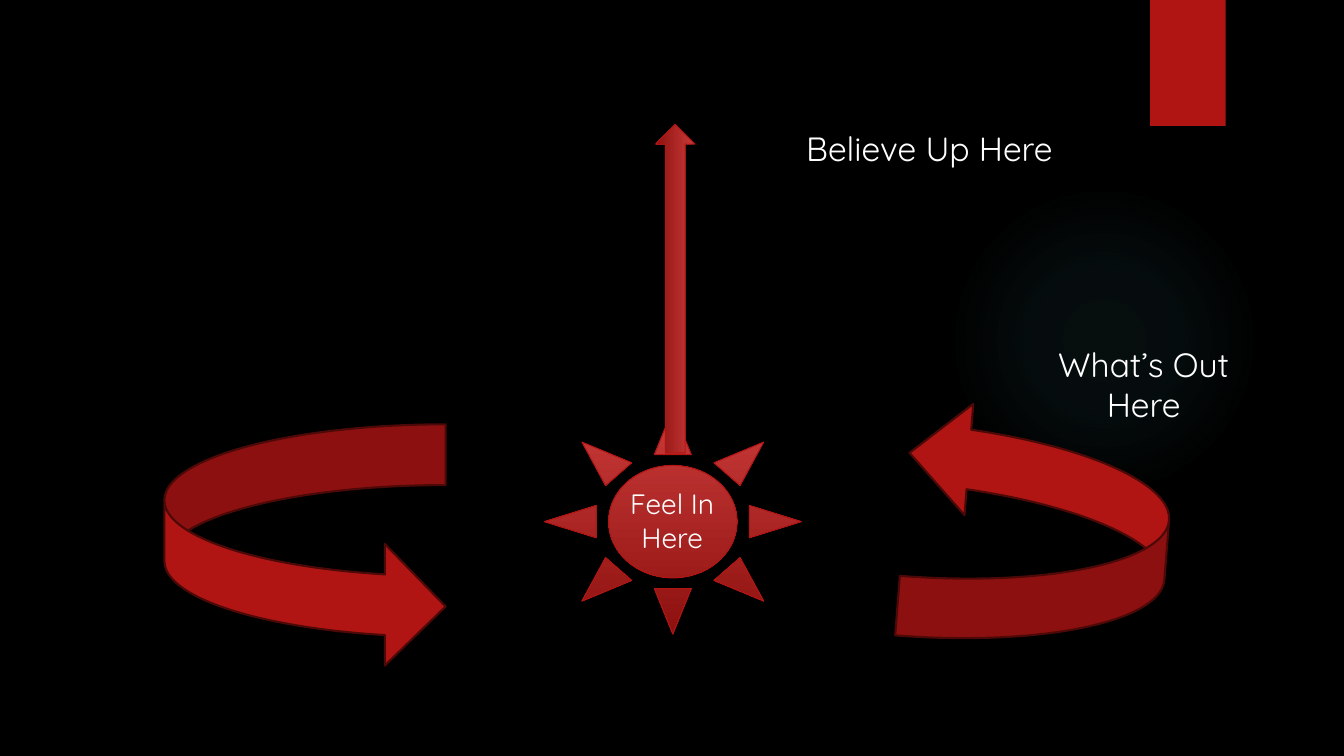
from lxml import etree
from pptx import Presentation
from pptx.dml.color import RGBColor
from pptx.enum.shapes import MSO_SHAPE
from pptx.enum.text import MSO_AUTO_SIZE, PP_ALIGN
from pptx.oxml.ns import qn
from pptx.util import Pt

OVAL, RECTANGLE, SUN = MSO_SHAPE.OVAL, MSO_SHAPE.RECTANGLE, MSO_SHAPE.SUN
LEFT_ARROW = MSO_SHAPE.LEFT_ARROW
CURVED_LEFT, CURVED_RIGHT = MSO_SHAPE.CURVED_LEFT_ARROW, MSO_SHAPE.CURVED_RIGHT_ARROW
LEFT, CENTER = PP_ALIGN.LEFT, PP_ALIGN.CENTER
GROW = MSO_AUTO_SIZE.SHAPE_TO_FIT_TEXT

FONT = "Quicksand"
COLORS = {
    "background": "000000",
    "text": "FFFFFF",
    "red": "B01513",
    "light": "C93B3A",
    "dark": "8D110F",
    "outline": "4D0908",
    "glow": "50B9C1",
}
GLOW_STOPS = [(0, 7), (36, 6), (69, 0)]


def color(name):
    return RGBColor.from_string(COLORS[name])


def add_figure(page, kind, place, line=None, width=0.75):
    shape = page.shapes.add_shape(kind, *map(Pt, place))
    shape.shadow.inherit = False
    if line:
        shape.line.color.rgb = color(line)
        shape.line.width = Pt(width)
    else:
        shape.line.fill.background()
    return shape


def add_solid(page, kind, place, line=None, width=0.75):
    shape = add_figure(page, kind, place, line, width)
    shape.fill.solid()
    shape.fill.fore_color.rgb = color("red")
    return shape


def add_shaded(page, kind, place):
    shape = add_figure(page, kind, place, "red")
    shape.fill.gradient()
    shape.fill.gradient_angle = 270
    for stop, name in zip(shape.fill.gradient_stops, ("light", "dark")):
        stop.color.rgb = color(name)
    return shape


def add_glow(page, place):
    shape = add_figure(page, OVAL, place)
    shape.fill.gradient()
    gradient = shape._element.spPr.find(qn("a:gradFill"))
    for child in list(gradient):
        gradient.remove(child)
    stops = etree.SubElement(gradient, qn("a:gsLst"))
    for position, opacity in GLOW_STOPS:
        stop = etree.SubElement(stops, qn("a:gs"), pos=str(position * 1000))
        tint = etree.SubElement(stop, qn("a:srgbClr"), val=COLORS["glow"])
        etree.SubElement(tint, qn("a:alpha"), val=str(opacity * 1000))
    circle = etree.SubElement(gradient, qn("a:path"), path="circle")
    center = dict.fromkeys("ltrb", "50000")
    etree.SubElement(circle, qn("a:fillToRect"), center)


def add_label(page, text, place, size, align):
    box = page.shapes.add_textbox(*map(Pt, place))
    frame = box.text_frame
    frame.word_wrap = True
    frame.auto_size = GROW
    frame.text = text
    para = frame.paragraphs[0]
    para.alignment = align
    for span in para.runs:
        span.font.name = FONT
        span.font.size = Pt(size)
        span.font.color.rgb = color("text")


def main():
    deck = Presentation()
    deck.slide_width, deck.slide_height = Pt(960), Pt(540)
    page = deck.slides.add_slide(deck.slide_layouts[6])
    page.background.fill.solid()
    page.background.fill.fore_color.rgb = color("background")

    add_glow(page, (677.5, 131.8, 221.8, 221.8))
    add_solid(page, RECTANGLE, (821.5, 0, 54, 90))

    add_shaded(page, SUN, (388.8, 292.3, 183.6, 160.6))
    up_arrow = add_shaded(page, LEFT_ARROW, (365, 192.2, 234.7, 28.1))
    up_arrow.rotation = 90
    add_label(page, "Feel In Here", (440.6, 344.2, 79.2, 55.4), 20, CENTER)

    inward = add_solid(page, CURVED_LEFT, (645.8, 290.9, 188.6, 170.6), "outline", 1.5)
    inward.adjustments[1] = 0.467
    inward.rotation = 184.5
    inward._element.spPr.find(qn("a:xfrm")).set("flipH", "1")
    add_solid(page, CURVED_RIGHT, (117.4, 303.1, 200.9, 173.5), "outline", 1.5)

    add_label(page, "What’s Out Here", (729.4, 241.9, 175, 65.5), 24, CENTER)
    add_label(page, "Believe Up Here", (568.8, 87.8, 201.6, 36), 24, LEFT)
    deck.save("out.pptx")


if __name__ == "__main__":
    main()
